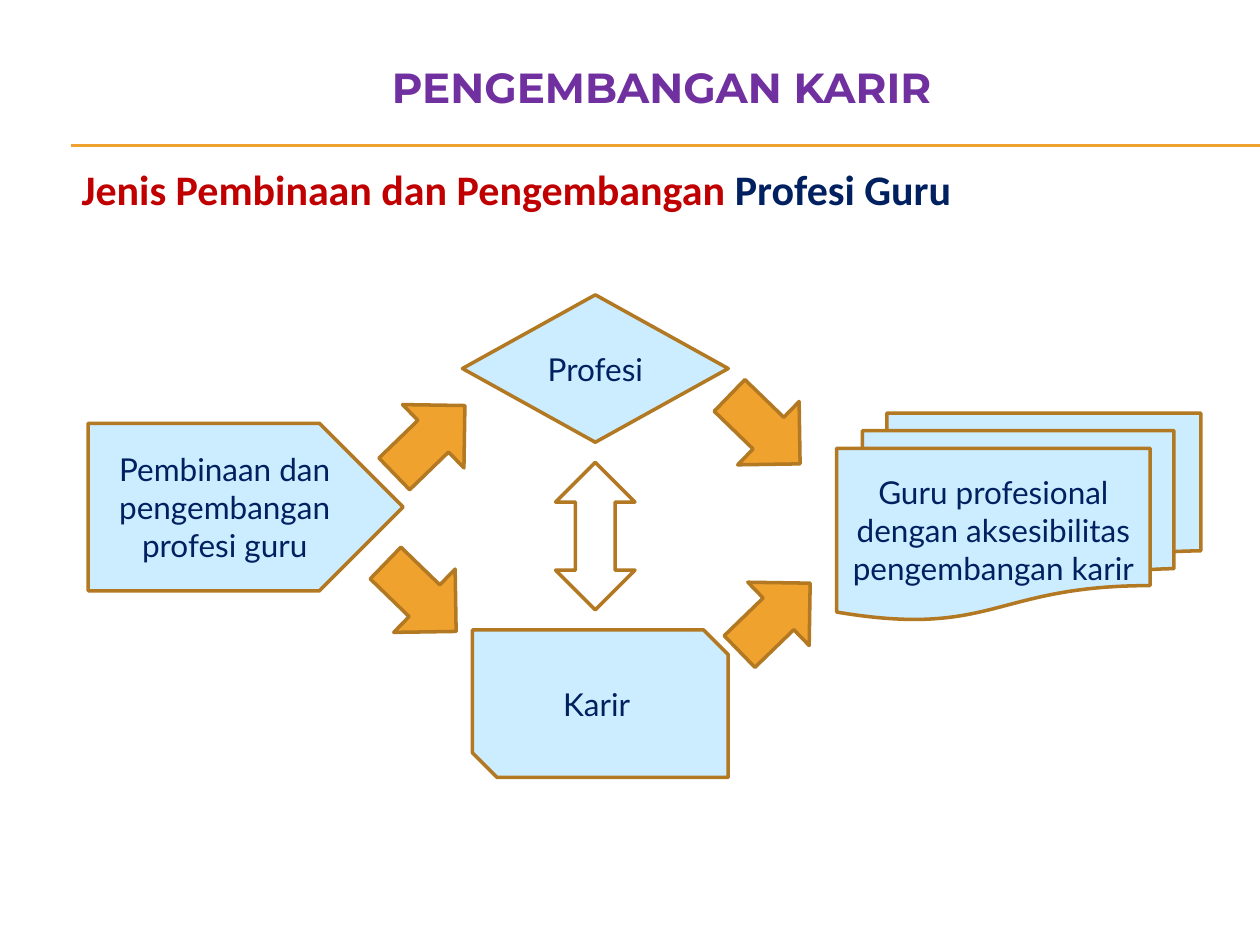
import dataclasses

import pptx
import pptx.dml.color
import pptx.enum.shapes
import pptx.enum.text
import pptx.oxml.ns
import pptx.util
import lxml.etree

Inches = pptx.util.Inches
Shape = pptx.enum.shapes.MSO_SHAPE
Align = pptx.enum.text.PP_ALIGN
Anchor = pptx.enum.text.MSO_ANCHOR


@dataclasses.dataclass(frozen=True)
class Theme:
    purple: str = "7030A0"
    red: str = "C00000"
    navy: str = "002060"
    pale_blue: str = "CCECFF"
    orange: str = "F0A22E"
    brown: str = "B27822"
    white: str = "FFFFFF"
    title_font: str = "Montserrat"
    heading_font: str = "Calibri"
    body_font: str = "Lato"
    heading_size: int = 24
    body_size: int = 18
    rule_width: float = 0.75
    outline_width: float = 2


def color(value):
    return pptx.dml.color.RGBColor.from_string(value)


class SlideBuilder:
    def __init__(self, slide, theme):
        self.slide = slide
        self.theme = theme

    def add_run(self, paragraph, text, font, size, text_color, bold=False):
        run = paragraph.add_run()
        run.text = text
        run.font.name = font
        run.font.size = pptx.util.Pt(size)
        run.font.bold = bold
        run.font.color.rgb = color(text_color)

    def rule(self, left, right, top):
        line = self.slide.shapes.add_connector(
            pptx.enum.shapes.MSO_CONNECTOR.STRAIGHT,
            Inches(left), Inches(top), Inches(right), Inches(top))
        line.line.color.rgb = color(self.theme.orange)
        line.line.width = pptx.util.Pt(self.theme.rule_width)
        lxml.etree.SubElement(line._element.spPr, pptx.oxml.ns.qn("a:effectLst"))

    def title(self, text, left, top, width, height):
        title = self.slide.shapes.title
        title.left, title.top = Inches(left), Inches(top)
        title.width, title.height = Inches(width), Inches(height)
        title.text_frame.vertical_anchor = Anchor.MIDDLE
        paragraph = title.text_frame.paragraphs[0]
        paragraph.alignment = Align.CENTER
        self.add_run(paragraph, text, self.theme.title_font,
                     self.theme.heading_size, self.theme.purple, True)

    def heading(self, parts, left, top, width, height):
        box = self.slide.shapes.add_textbox(
            Inches(left), Inches(top), Inches(width), Inches(height))
        box.text_frame.word_wrap = True
        box.text_frame.auto_size = pptx.enum.text.MSO_AUTO_SIZE.SHAPE_TO_FIT_TEXT
        for text, text_color in parts:
            self.add_run(box.text_frame.paragraphs[0], text, self.theme.heading_font,
                         self.theme.heading_size, text_color, True)

    def shape(self, kind, fill, left, top, width, height):
        shape = self.slide.shapes.add_shape(
            kind, Inches(left), Inches(top), Inches(width), Inches(height))
        shape.shadow.inherit = False
        shape.fill.solid()
        shape.fill.fore_color.rgb = color(fill)
        shape.line.color.rgb = color(self.theme.brown)
        shape.line.width = pptx.util.Pt(self.theme.outline_width)
        return shape

    def node(self, kind, text, left, top, width, height):
        shape = self.shape(kind, self.theme.pale_blue, left, top, width, height)
        shape.text_frame.word_wrap = True
        shape.text_frame.vertical_anchor = Anchor.MIDDLE
        paragraph = shape.text_frame.paragraphs[0]
        paragraph.alignment = Align.CENTER
        self.add_run(paragraph, text, self.theme.body_font,
                     self.theme.body_size, self.theme.navy)

    def flow_arrow(self, left, top, rotation):
        arrow = self.shape(Shape.RIGHT_ARROW, self.theme.orange, left, top, 0.78, 0.7)
        arrow.rotation = rotation


def main():
    theme = Theme()
    presentation = pptx.Presentation()
    presentation.slide_width = Inches(10)
    presentation.slide_height = Inches(7.5)
    slide = presentation.slides.add_slide(presentation.slide_layouts[5])
    builder = SlideBuilder(slide, theme)

    for top in (1.15, 1.16):
        builder.rule(0.56, 10, top)
    builder.title("PENGEMBANGAN KARIR", 0.5, 0.23, 9.5, 0.92)
    builder.heading([("Jenis Pembinaan dan Pengembangan ", theme.red),
                     ("Profesi Guru", theme.navy)], 0.55, 1.25, 9.06, 0.5)

    nodes = [
        (Shape.PENTAGON, "Pembinaan dan pengembangan profesi guru", 0.7, 3.36, 2.5, 1.33),
        (Shape.DIAMOND, "Profesi", 3.67, 2.34, 2.11, 1.17),
        (Shape.SNIP_2_DIAG_RECTANGLE, "Karir ", 3.75, 5, 2.03, 1.17),
        (Shape.FLOWCHART_MULTIDOCUMENT,
         "Guru profesional dengan aksesibilitas pengembangan karir", 6.64, 3.28, 2.89, 1.64),
    ]
    for node in nodes:
        builder.node(*node)

    tilt = 44.1
    upward, downward = 360 - tilt, tilt
    for left, top, rotation in [(3.02, 3.14, upward), (2.95, 4.39, downward),
                                (5.68, 3.06, downward), (5.76, 4.55, upward)]:
        builder.flow_arrow(left, top, rotation)
    builder.shape(Shape.UP_DOWN_ARROW, theme.white, 4.41, 3.67, 0.63, 1.17)

    presentation.save("out.pptx")


if __name__ == "__main__":
    main()
